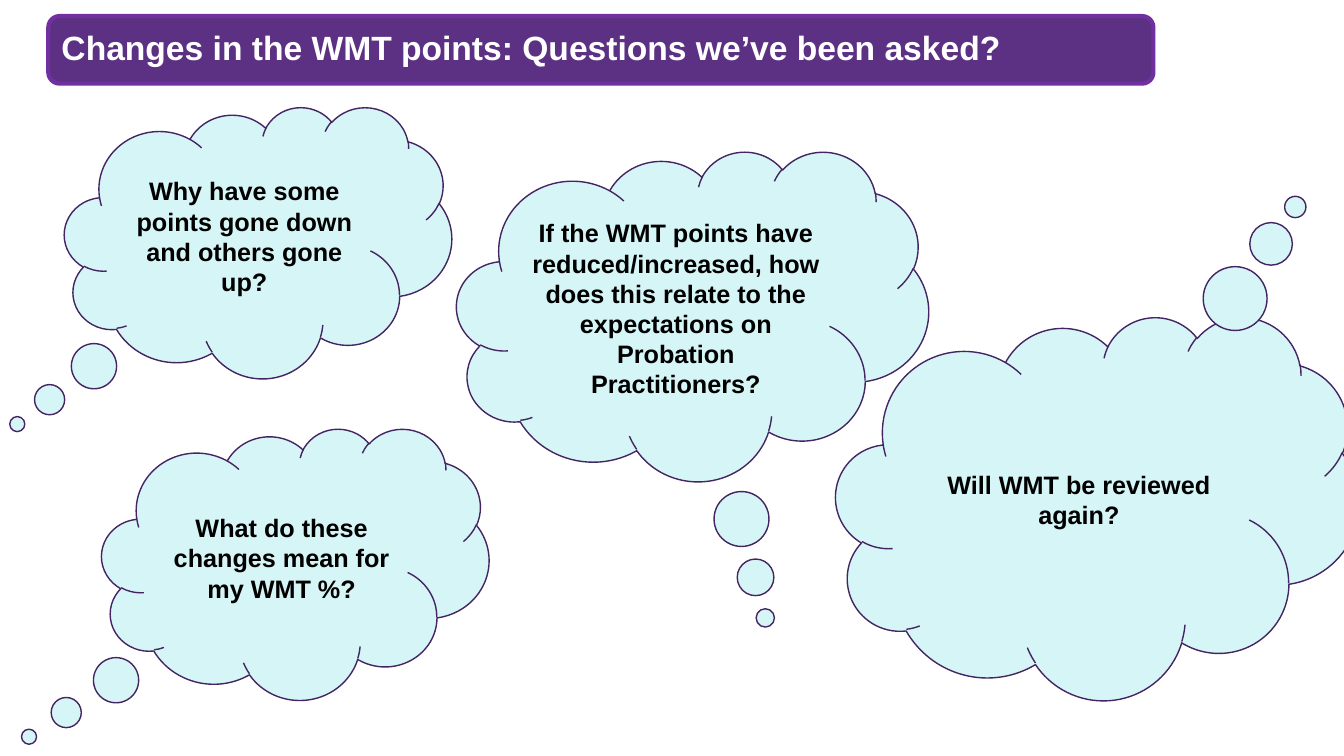
from pptx import Presentation
from pptx import util as u
from pptx.dml.color import RGBColor
from pptx.enum import shapes, text

PALE_CYAN = RGBColor(0xD5, 0xF5, 0xF6)
DARK_PURPLE = RGBColor(0x44, 0x24, 0x61)
PURPLE = RGBColor(0x5C, 0x31, 0x83)
BRIGHT_PURPLE = RGBColor(0x70, 0x30, 0xA0)
BLACK = RGBColor(0, 0, 0)
WHITE = RGBColor(0xFF, 0xFF, 0xFF)


def add_filled_shape(kind, box, fill, line, line_width):
    shape = slide.shapes.add_shape(kind, *[u.Inches(length) for length in box])
    shape.shadow.inherit = False
    shape.fill.solid()
    shape.fill.fore_color.rgb = fill
    shape.line.color.rgb = line
    shape.line.width = u.Pt(line_width)
    return shape


def write_text(shape, words, size, color, alignment):
    frame = shape.text_frame
    frame.text = words
    frame.word_wrap = True
    frame.auto_size = text.MSO_AUTO_SIZE.NONE
    frame.vertical_anchor = text.MSO_ANCHOR.MIDDLE
    paragraph = frame.paragraphs[0]
    paragraph.alignment = alignment
    font = paragraph.runs[0].font
    font.name = "Arial"
    font.size = u.Pt(size)
    font.bold = True
    font.color.rgb = color
    return frame


presentation = Presentation()
presentation.slide_width = u.Inches(13.33)
presentation.slide_height = u.Inches(7.5)
slide = presentation.slides.add_slide(presentation.slide_layouts[5])

questions = [
    ("Why have some points gone down and others gone up?",
     (0.64, 1.06, 3.84, 2.69), (-0.622, 0.67)),
    ("If the WMT points have reduced/increased, how does this relate to the "
     "expectations on Probation Practitioners?",
     (4.53, 1.5, 4.68, 3.27), (0.154, 0.916)),
    ("Will WMT be reviewed again?",
     (8.29, 3.14, 5.19, 3.8), (0.378, -0.786)),
    ("What do these changes mean for my WMT %?",
     (1.01, 4.25, 3.84, 2.69), (-0.688, 0.637)),
]
for question, box, tail in questions:
    cloud = add_filled_shape(shapes.MSO_SHAPE.CLOUD_CALLOUT, box,
                             PALE_CYAN, DARK_PURPLE, 1)
    cloud.adjustments[0], cloud.adjustments[1] = tail
    write_text(cloud, question, 18, BLACK, text.PP_ALIGN.CENTER)

title_bar = add_filled_shape(shapes.MSO_SHAPE.ROUNDED_RECTANGLE,
                             (0.48, 0.16, 10.96, 0.67), PURPLE, BRIGHT_PURPLE, 3)

title = slide.shapes.title
title_bar.element.addnext(title.element)
title.left, title.top = u.Inches(0.51), u.Inches(0.19)
title.width, title.height = u.Inches(10.9), u.Inches(0.6)
title_frame = write_text(title, "Changes in the WMT points: Questions we’ve been asked?",
                         24, WHITE, text.PP_ALIGN.LEFT)
title_frame.margin_left = title_frame.margin_right = u.Inches(0.1)
title_frame.margin_top = title_frame.margin_bottom = u.Inches(0.1)
title_frame.paragraphs[0].line_spacing = 0.9

presentation.save("out.pptx")
